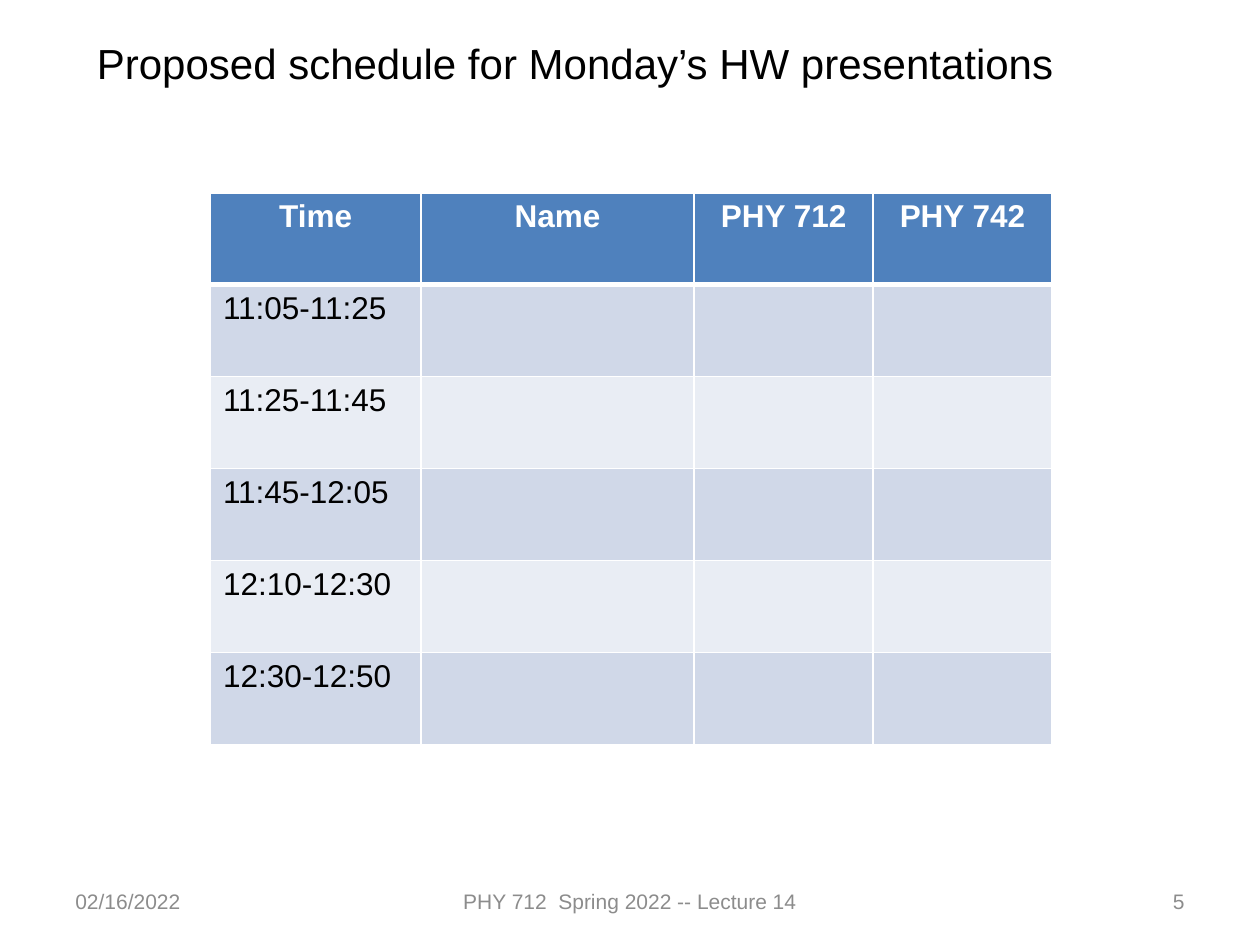
from dataclasses import dataclass

from lxml.etree import SubElement
from pptx import Presentation
from pptx.dml.color import RGBColor
from pptx.enum.text import MSO_ANCHOR, PP_ALIGN
from pptx.oxml.ns import qn
from pptx.util import Inches, Pt


@dataclass(frozen=True)
class Theme:
    font: str = "Arial"
    text: str = "000000"
    muted: str = "8C8C8C"
    white: str = "FFFFFF"
    header: str = "4F81BD"
    bands: tuple = ("D0D8E8", "E9EDF4")
    title_size: int = 24
    table_size: int = 18
    footer_size: int = 12
    thin_border: int = 1
    thick_border: int = 3


THEME = Theme()
HEADINGS = ("Time", "Name", "PHY 712", "PHY 742")
TIMES = ("11:05-11:25", "11:25-11:45", "11:45-12:05", "12:10-12:30", "12:30-12:50")
COLUMN_WIDTHS = (1.67, 2.17, 1.42, 1.42)


def add_text(frame, text, size, color, alignment=PP_ALIGN.LEFT, bold=False):
    paragraph = frame.paragraphs[0]
    paragraph.alignment = alignment
    run = paragraph.add_run()
    run.text = text
    run.font.name = THEME.font
    run.font.size = Pt(size)
    run.font.bold = bold
    run.font.color.rgb = RGBColor.from_string(color)


def add_text_box(slide, left, top, width, height, anchor=MSO_ANCHOR.TOP):
    box = slide.shapes.add_textbox(Inches(left), Inches(top), Inches(width), Inches(height))
    box.text_frame.word_wrap = True
    box.text_frame.vertical_anchor = anchor
    return box.text_frame


def add_title(slide, left, top, width, height):
    frame = add_text_box(slide, left, top, width, height)
    add_text(frame, "Proposed schedule for Monday’s HW presentations", THEME.title_size, THEME.text)


def set_borders(cell, top_width, bottom_width):
    properties = cell._tc.get_or_add_tcPr()
    thin = THEME.thin_border
    sides = (("L", thin), ("R", thin), ("T", top_width), ("B", bottom_width))
    for position, (side, width) in enumerate(sides):
        line = SubElement(properties, qn(f"a:ln{side}"), w=str(Pt(width)))
        fill = SubElement(line, qn("a:solidFill"))
        SubElement(fill, qn("a:srgbClr"), val=THEME.white)
        properties.insert(position, line)


def add_schedule(slide, left, top, width, height):
    row_count = len(TIMES) + 1
    table = slide.shapes.add_table(
        row_count, len(HEADINGS), Inches(left), Inches(top), Inches(width), Inches(height)
    ).table
    for column, column_width in zip(table.columns, COLUMN_WIDTHS):
        column.width = Inches(column_width)
    for row_index, row in enumerate(table.rows):
        row.height = Inches(height / row_count)
        is_header = row_index == 0
        color = THEME.header if is_header else THEME.bands[(row_index - 1) % 2]
        top_width = THEME.thick_border if row_index == 1 else THEME.thin_border
        bottom_width = THEME.thick_border if is_header else THEME.thin_border
        for cell in row.cells:
            cell.fill.solid()
            cell.fill.fore_color.rgb = RGBColor.from_string(color)
            set_borders(cell, top_width, bottom_width)
    for column_index, heading in enumerate(HEADINGS):
        frame = table.cell(0, column_index).text_frame
        add_text(frame, heading, THEME.table_size, THEME.white, PP_ALIGN.CENTER, True)
    for row_index, time in enumerate(TIMES, start=1):
        add_text(table.cell(row_index, 0).text_frame, time, THEME.table_size, THEME.text)


def add_footer(slide, left, top, width, height):
    side_width, center_width = 2.33, 3.17
    parts = (
        ("02/16/2022", left, side_width, PP_ALIGN.LEFT),
        (
            "PHY 712  Spring 2022 -- Lecture 14",
            left + (width - center_width) / 2,
            center_width,
            PP_ALIGN.CENTER,
        ),
        ("5", left + width - side_width, side_width, PP_ALIGN.RIGHT),
    )
    for text, part_left, part_width, alignment in parts:
        frame = add_text_box(slide, part_left, top, part_width, height, MSO_ANCHOR.MIDDLE)
        add_text(frame, text, THEME.footer_size, THEME.muted, alignment)


def main():
    presentation = Presentation()
    presentation.slide_width = Inches(10)
    presentation.slide_height = Inches(7.5)
    slide = presentation.slides.add_slide(presentation.slide_layouts[6])
    add_footer(slide, 0.5, 6.95, 9, 0.4)
    add_schedule(slide, 1.67, 1.53, sum(COLUMN_WIDTHS), 4.38)
    add_title(slide, 0.67, 0.25, 9.25, 0.5)
    presentation.save("out.pptx")


if __name__ == "__main__":
    main()
